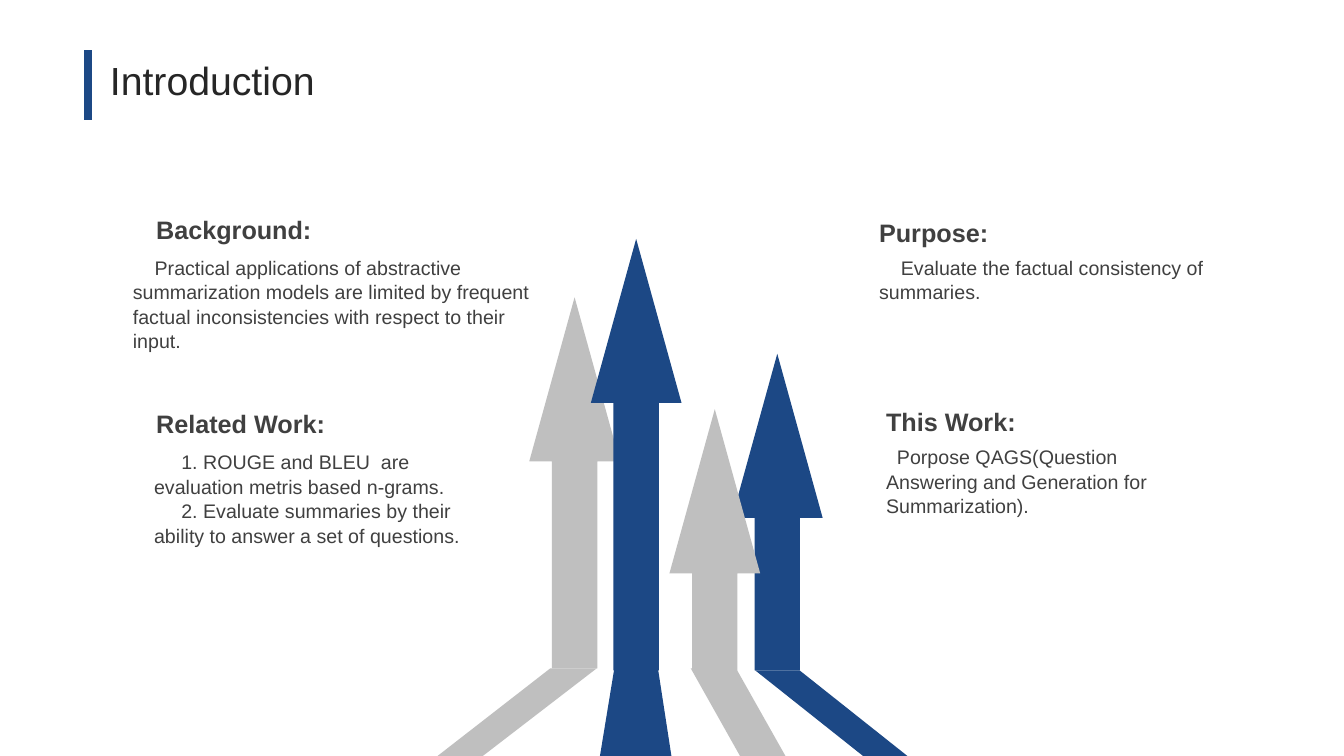
from lxml import etree
from pptx import Presentation
from pptx.dml.color import RGBColor
from pptx.enum.shapes import MSO_CONNECTOR, MSO_SHAPE
from pptx.enum.text import MSO_ANCHOR, MSO_AUTO_SIZE, PP_ALIGN
from pptx.oxml.ns import qn
from pptx.util import Inches, Pt

STRAIGHT = MSO_CONNECTOR.STRAIGHT
UP_ARROW = MSO_SHAPE.UP_ARROW
TOP = MSO_ANCHOR.TOP
NO_AUTOFIT = MSO_AUTO_SIZE.NONE
CENTER = PP_ALIGN.CENTER

WIDTH, HEIGHT = Inches(13.33), Inches(7.5)
FONT = "Arial"
BLUE, GREY = "1C4885", "BFBFBF"
TITLE_COLOR, TEXT_COLOR = "262626", "404040"
SPACE_WIDTH = 0.054  # inches, one space at body size
LINE_SPACING = 1.04

# left, top, bottom, colour; from back to front
ARROWS = [
    (39.38, 39.33, 88.4, GREY),
    (54.46, 46.8, 88.67, BLUE),
    (49.81, 54.13, 88.67, GREY),
    (43.96, 31.6, 88.67, BLUE),
]
# top left, top right, bottom right, bottom left, top, colour
FEET = [
    (40.96, 44.41, 35.93, 32.56, 88.4, GREY),
    (56.19, 59.49, 67.52, 64.22, 88.67, BLUE),
    (45.76, 48.91, 49.96, 44.64, 87.87, BLUE),
    (51.39, 54.76, 58.44, 55.06, 88.4, GREY),
]
# heading, its left and top; body left, top, width, height; (indent in spaces, text)
SECTIONS = [
    ("Background:", 10.88, 27.47, (9.15, 33.07, 33.08, 10.8), [
        (4, "Practical applications of abstractive summarization models are limited "
            "by frequent factual inconsistencies with respect to their input.")]),
    ("Purpose:", 64.67, 27.87, (64.67, 33.07, 25.88, 7.6), [
        (4, "Evaluate the factual consistency of summaries.")]),
    ("This Work:", 65.19, 52.93, (65.19, 58.13, 25.88, 10.8), [
        (2, "Porpose QAGS(Question"),
        (0, "Answering and Generation for Summarization).")]),
    ("Related Work:", 10.88, 53.2, (10.73, 58.8, 24.98, 13.87), [
        (5, "1. ROUGE and BLEU  are evaluation metris based n-grams."),
        (5, "2. Evaluate summaries by their ability to answer a set of questions.")]),
]


def across(percent):
    return round(WIDTH * percent / 100)


def down(percent):
    return round(HEIGHT * percent / 100)


def box(left, top, width, height):
    return across(left), down(top), across(width), down(height)


def color(hex_code):
    return RGBColor.from_string(hex_code)


def paint(shape, fill):
    shape.shadow.inherit = False
    shape.fill.solid()
    shape.fill.fore_color.rgb = color(fill)
    shape.line.fill.background()


def format_paragraph(paragraph, size, hex_code, bold=False):
    paragraph.line_spacing = LINE_SPACING
    font = paragraph.font
    font.name, font.size, font.bold = FONT, Pt(size), bold
    font.color.rgb = color(hex_code)


def add_title(slide, text):
    title = slide.shapes.title
    title.left, title.top, title.width, title.height = box(4.13, 6.53, 23.33, 7.6)
    frame = title.text_frame
    frame.text = text
    frame.auto_size, frame.vertical_anchor = NO_AUTOFIT, TOP
    frame.paragraphs[0].alignment = CENTER
    format_paragraph(frame.paragraphs[0], 28, TITLE_COLOR)


def add_title_bar(slide):
    bar = slide.shapes.add_connector(
        STRAIGHT, across(6.53), down(6.67), across(6.53), down(15.87))
    bar.line.color.rgb = color(BLUE)
    bar.line.width = Pt(6)
    etree.SubElement(bar._element.spPr, qn("a:effectLst"))


def add_arrow(slide, left, top, bottom, fill):
    arrow = slide.shapes.add_shape(UP_ARROW, *box(left, top, 6.75, bottom - top))
    arrow.adjustments[0] = 0.5
    arrow.adjustments[1] = 1.81
    paint(arrow, fill)


def add_foot(slide, top_left, top_right, bottom_right, bottom_left, top, fill):
    """Draw the slanted base that runs from an arrow to the slide's lower edge."""
    builder = slide.shapes.build_freeform(across(top_left), down(top))
    builder.add_line_segments([
        (across(top_right), down(top)),
        (across(bottom_right), HEIGHT),
        (across(bottom_left), HEIGHT),
    ])
    paint(builder.convert_to_shape(), fill)


def add_text(slide, place, lines, size, bold=False):
    """Add a wrapped text box; each line is (first-line indent in spaces, text)."""
    frame = slide.shapes.add_textbox(*box(*place)).text_frame
    frame.word_wrap = True
    for index, (spaces, text) in enumerate(lines):
        paragraph = frame.add_paragraph() if index else frame.paragraphs[0]
        paragraph.text = text
        properties = paragraph._p.get_or_add_pPr()
        properties.set("marL", "0")
        properties.set("indent", str(Inches(SPACE_WIDTH * spaces)))
        format_paragraph(paragraph, size, TEXT_COLOR, bold)


def main():
    presentation = Presentation()
    presentation.slide_width, presentation.slide_height = WIDTH, HEIGHT
    slide = presentation.slides.add_slide(presentation.slide_layouts.get_by_name("Title Only"))
    add_title(slide, "Introduction")
    add_title_bar(slide)
    for arrow in ARROWS:
        add_arrow(slide, *arrow)
    for foot in FEET:
        add_foot(slide, *foot)
    for heading, left, top, body_place, body in SECTIONS:
        add_text(slide, (left, top, 18.23, 5.33), [(0, heading)], 18, bold=True)
        add_text(slide, body_place, body, 14)
    presentation.save("out.pptx")


if __name__ == "__main__":
    main()
